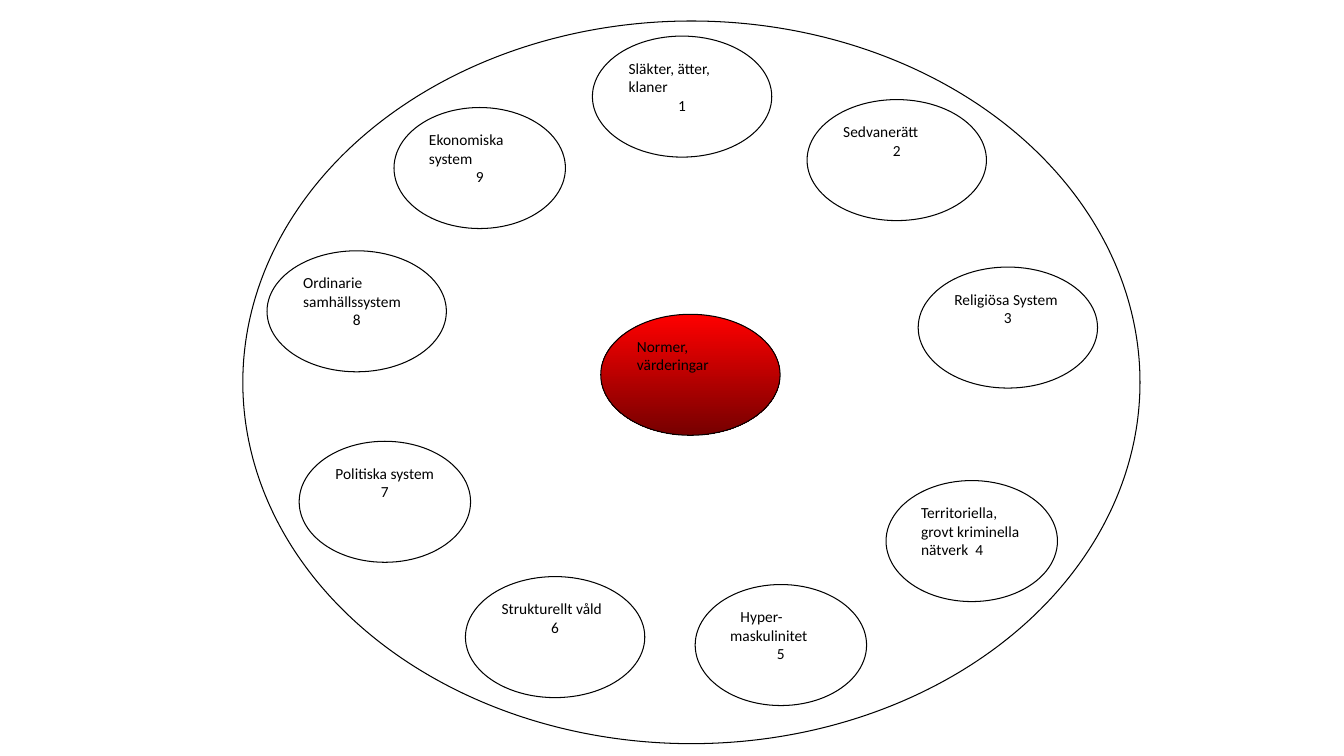
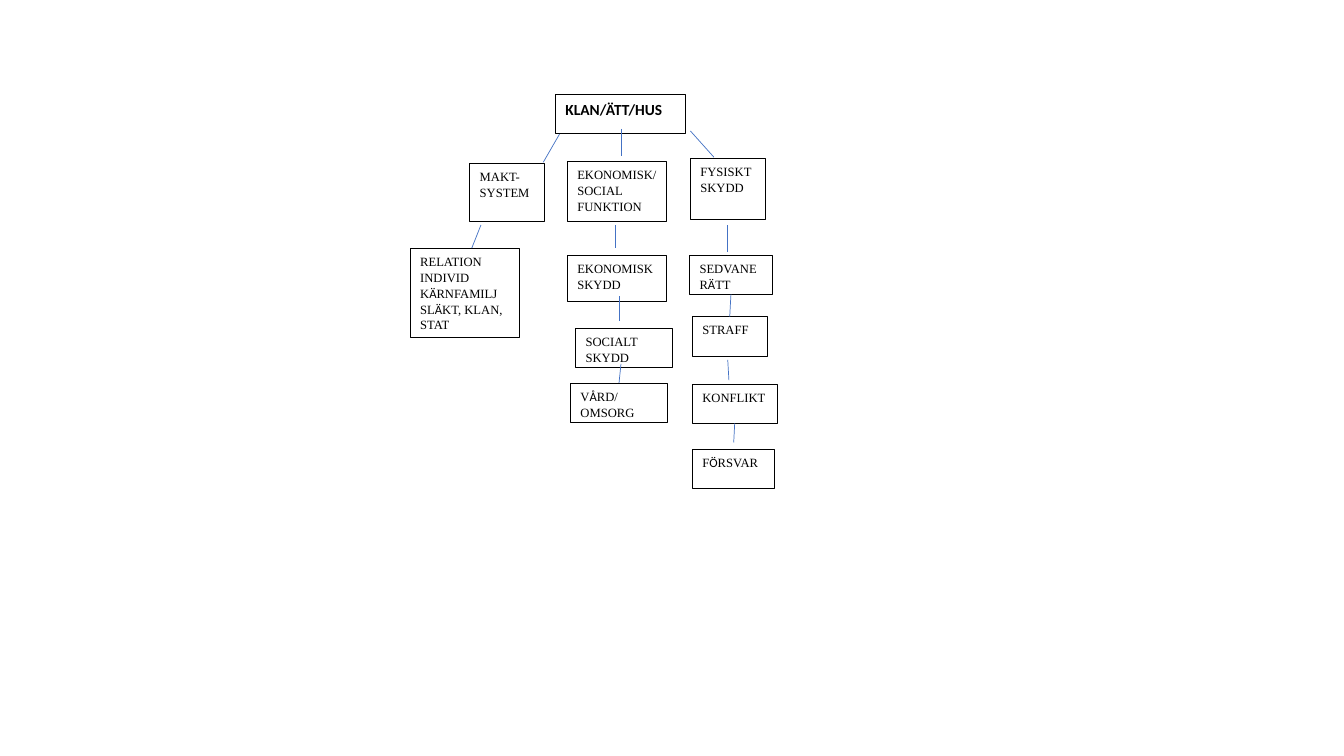
from dataclasses import dataclass
from itertools import groupby

from lxml import etree
from pptx import Presentation
from pptx.dml.color import RGBColor
from pptx.enum.shapes import MSO_CONNECTOR, MSO_SHAPE
from pptx.enum.text import MSO_ANCHOR, PP_ALIGN
from pptx.oxml.ns import qn
from pptx.util import Cm, Pt


@dataclass(frozen=True)
class Theme:
    paper: RGBColor = RGBColor(0xFF, 0xFF, 0xFF)
    ink: RGBColor = RGBColor(0x00, 0x00, 0x00)
    branch: RGBColor = RGBColor(0x44, 0x72, 0xC4)
    core_top: RGBColor = RGBColor(0xFF, 0x00, 0x00)
    core_bottom: RGBColor = RGBColor(0x76, 0x00, 0x00)
    sans: str = "Calibri"
    serif: str = "Times New Roman"
    large: float = 11
    small: float = 9
    ring_line: float = 0.75
    tree_line: float = 0.5


THEME = Theme()
BOTTOM, TOP = 2, 0

RING_BOX = (6.12, 0.53, 22.61, 18.21)
OVAL_HEIGHT = 3.05
WIDE, NARROW = 4.52, 4.32
# label, number, left, top, width, label format
SYSTEMS = [
    ("Släkter, ätter, klaner", "1", 8.81, 0.38, WIDE, {}),
    ("Sedvanerätt", "2", 14.22, 1.98, WIDE, {}),
    ("Religiösa System", "3", 17.02, 6.2, WIDE, {}),
    ("Territoriella, grovt kriminella nätverk  4", None, 16.21, 11.58, NARROW, {}),
    ("Hyper-maskulinitet", "5", 11.4, 14.2, NARROW, {"indent": 0.26}),
    ("Strukturellt våld", "6", 5.61, 14.0, WIDE, {}),
    ("Politiska system", "7", 1.42, 10.59, NARROW, {"align": PP_ALIGN.CENTER}),
    ("Ordinarie samhällssystem", "8", 0.61, 5.79, WIDE, {}),
    ("Ekonomiska system", "9", 3.81, 2.18, NARROW, {}),
]

TREE_ORIGIN = (10.34, 2.39)
ROOT = ("KLAN/ÄTT/HUS", 3.66, 0, 3.28, 0.97)
# label, left, top, width, height
FUNCTIONS = [
    ("MAKT-SYSTEM", 1.5, 1.73, 1.88, 1.47),
    ("RELATION INDIVID KÄRNFAMILJ SLÄKT, KLAN, STAT", 0, 3.86, 2.74, 2.26),
    ("EKONOMISK/SOCIAL FUNKTION", 3.96, 1.68, 2.5, 1.5),
    ("EKONOMISK SKYDD", 3.96, 4.04, 2.5, 1.17),
    ("SOCIALT SKYDD", 4.17, 5.89, 2.44, 0.99),
    ("VÅRD/OMSORG", 4.04, 7.26, 2.44, 0.99),
    ("FYSISKT SKYDD", 7.06, 1.6, 1.88, 1.55),
    ("SEDVANERÄTT", 7.04, 4.04, 2.08, 0.99),
    ("STRAFF", 7.11, 5.59, 1.88, 0.99),
    ("KONFLIKT", 7.11, 7.29, 2.13, 0.99),
    ("FÖRSVAR", 7.11, 8.94, 2.06, 0.99),
]
# Each end is a free point or the label of the node it joins.
BRANCHES = [
    ((3.76, 0.99), (3.35, 1.7)),
    ((1.78, 3.28), (1.55, 3.86)),
    ((5.31, 0.86), (5.31, 1.55)),
    ((5.18, 3.28), (5.18, 3.86)),
    ((5.26, 5.08), (5.26, 5.69)),
    ((5.31, 6.78), "VÅRD/OMSORG"),
    ((7.06, 0.91), (7.65, 1.57)),
    ((8.0, 3.28), (8.0, 3.96)),
    ("SEDVANERÄTT", "STRAFF"),
    ((8.0, 6.68), (8.03, 7.19)),
    ("KONFLIKT", (8.15, 8.76)),
]


def add_outlined(slide, kind, left, top, width, height, *, line):
    shape = slide.shapes.add_shape(kind, Cm(left), Cm(top), Cm(width), Cm(height))
    shape.shadow.inherit = False
    shape.fill.solid()
    shape.fill.fore_color.rgb = THEME.paper
    shape.line.color.rgb = THEME.ink
    shape.line.width = Pt(line)
    return shape


def write(paragraph, text, *, size=THEME.large, font=THEME.sans, accent_font=None,
          bold=False, align=PP_ALIGN.LEFT, indent=0, spacing=None):
    """Fill a paragraph; letters outside ASCII take accent_font if given."""
    paragraph.alignment = align
    if spacing:
        paragraph.line_spacing = spacing
    if indent:
        paragraph._p.get_or_add_pPr().set("indent", str(Cm(indent)))
    for plain, letters in groupby(text, str.isascii):
        run = paragraph.add_run()
        run.text = "".join(letters)
        run.font.name = font if plain else accent_font or font
        run.font.size = Pt(size)
        run.font.bold = bold
        run.font.color.rgb = THEME.ink


def open_text(shape):
    """Set the shape's text to start at the top and return its first paragraph."""
    frame = shape.text_frame
    frame.word_wrap = True
    frame.vertical_anchor = MSO_ANCHOR.TOP
    return frame.paragraphs[0]


def add_oval(slide, left, top, width, label, number=None, **label_format):
    oval = add_outlined(slide, MSO_SHAPE.OVAL, left, top, width, OVAL_HEIGHT,
                        line=THEME.ring_line)
    write(open_text(oval), label, **label_format)
    if number:
        write(oval.text_frame.add_paragraph(), number, align=PP_ALIGN.CENTER)
    return oval


def build_ring(slide, box):
    left, top, width, height = box
    add_outlined(slide, MSO_SHAPE.OVAL, left, top, width, height, line=THEME.ring_line)
    for label, number, dx, dy, oval_width, label_format in SYSTEMS:
        add_oval(slide, left + dx, top + dy, oval_width, label, number, **label_format)
    core = add_oval(slide, left + 9.02, top + 7.39, WIDE, "Normer, värderingar")
    core.fill.gradient()
    core.fill.gradient_angle = 270
    for stop, color in zip(core.fill.gradient_stops, (THEME.core_top, THEME.core_bottom)):
        stop.color.rgb = color


def add_branch(slide, origin, nodes, start, end):
    def place(point):
        if point in nodes:
            return 0, 0
        return [Cm(base + offset) for base, offset in zip(origin, point)]

    branch = slide.shapes.add_connector(MSO_CONNECTOR.STRAIGHT, *place(start), *place(end))
    if start in nodes:
        branch.begin_connect(nodes[start], BOTTOM)
    if end in nodes:
        branch.end_connect(nodes[end], TOP)
    branch.line.color.rgb = THEME.branch
    branch.line.width = Pt(THEME.tree_line)
    etree.SubElement(branch._element.spPr, qn("a:effectLst"))


def build_tree(slide, origin):
    left, top = origin

    def add_node(label, dx, dy, width, height, **text_format):
        node = add_outlined(slide, MSO_SHAPE.RECTANGLE, left + dx, top + dy, width, height,
                            line=THEME.tree_line)
        write(open_text(node), label, **text_format)
        return node

    add_node(*ROOT, bold=True)
    nodes = {
        function[0]: add_node(*function, size=THEME.small, font=THEME.serif,
                              accent_font=THEME.sans, spacing=1.05)
        for function in FUNCTIONS
    }
    for start, end in BRANCHES:
        add_branch(slide, origin, nodes, start, end)


def main():
    deck = Presentation()
    deck.slide_width, deck.slide_height = Cm(33.87), Cm(19.05)
    blank = deck.slide_layouts[6]
    build_ring(deck.slides.add_slide(blank), RING_BOX)
    build_tree(deck.slides.add_slide(blank), TREE_ORIGIN)
    deck.save("out.pptx")


if __name__ == "__main__":
    main()
